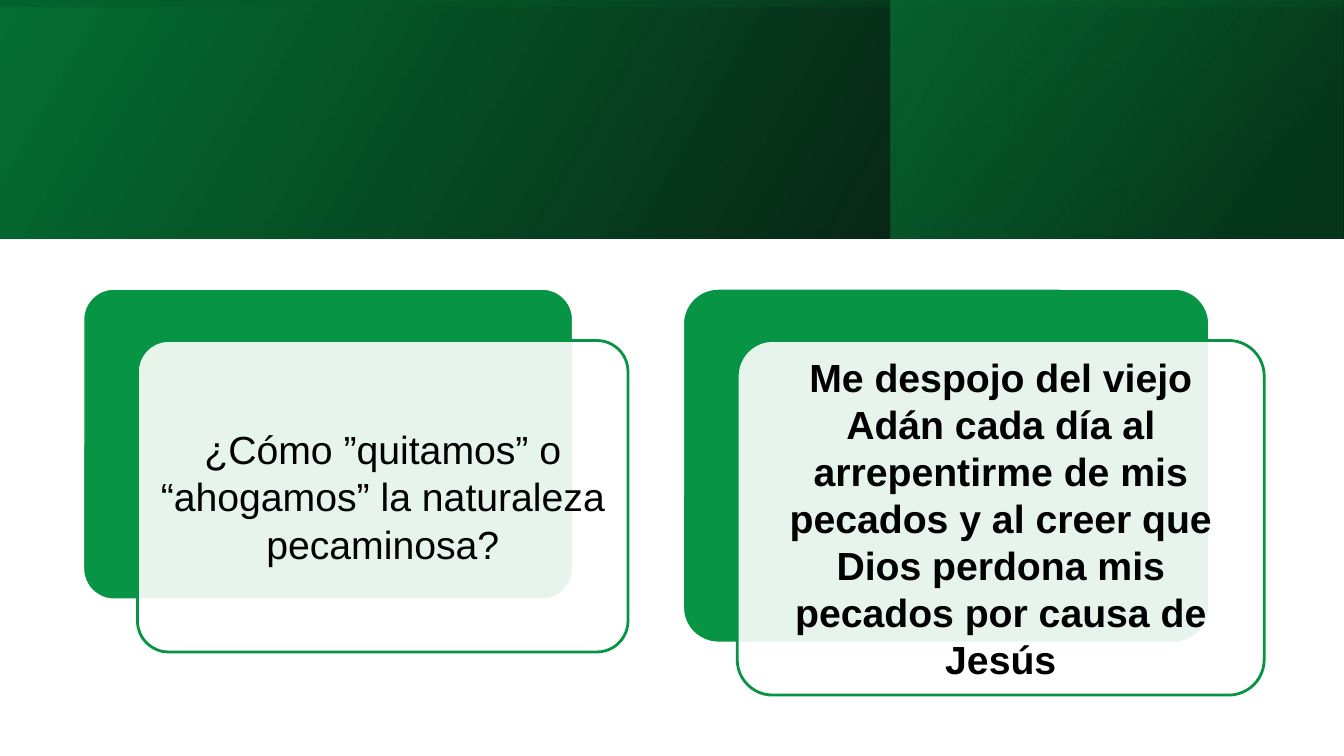
import pptx
import pptx.util
import pptx.oxml
import pptx.dml.color
import pptx.enum.shapes
import pptx.enum.text

Pt = pptx.util.Pt
KIND = pptx.enum.shapes.MSO_SHAPE
NS = "http://schemas.openxmlformats.org/drawingml/2006/main"
WIDE, HIGH = 960, 540
BAND = 170.6
ROUND = 0.1


def color(code):
    return pptx.dml.color.RGBColor.from_string(code)


def write(frame, text, size=28, bold=False, ink="000000", font="Arial"):
    para = frame.paragraphs[0]
    para.alignment = pptx.enum.text.PP_ALIGN.CENTER
    run = para.add_run()
    run.text = text
    run.font.name = font
    run.font.size = Pt(size)
    run.font.bold = bold
    run.font.color.rgb = color(ink)


class Deck:
    green = "079444"
    white = "FFFFFF"

    def __init__(self):
        self.file = pptx.Presentation()
        self.file.slide_width = Pt(WIDE)
        self.file.slide_height = Pt(HIGH)
        self.slide = self.file.slides.add_slide(self.file.slide_layouts[6])

    def shape(self, kind, *box):
        item = self.slide.shapes.add_shape(kind, *map(Pt, box))
        item.shadow.inherit = False
        return item

    def fade(self, box, stops, angle, turn=0):
        """Add a mirrored rectangle with a gradient of (place, colour, opacity) stops."""
        item = self.shape(KIND.RECTANGLE, *box)
        item.rotation = turn
        item.line.fill.background()
        props = item._element.spPr
        props.xfrm.set("flipH", "1")
        marks = "".join(
            f'<a:gs pos="{place * 1000}"><a:srgbClr val="{code}">'
            f'<a:alpha val="{clear * 1000}"/></a:srgbClr></a:gs>'
            for place, code, clear in stops)
        grad = pptx.oxml.parse_xml(
            f'<a:gradFill xmlns:a="{NS}" rotWithShape="1"><a:gsLst>{marks}</a:gsLst>'
            f'<a:lin ang="{angle * 60000}" scaled="0"/></a:gradFill>')
        props.find(f"{{{NS}}}prstGeom").addnext(grad)

    def panel(self, box, fill, line, clear=100):
        item = self.shape(KIND.ROUNDED_RECTANGLE, *box)
        item.adjustments[0] = ROUND
        item.fill.solid()
        item.fill.fore_color.rgb = color(fill)
        item.line.color.rgb = color(line)
        item.line.width = Pt(2)
        if clear < 100:
            tint = item._element.spPr.find(f"{{{NS}}}solidFill")[0]
            tint.append(pptx.oxml.parse_xml(
                f'<a:alpha xmlns:a="{NS}" val="{clear * 1000}"/>'))

    def label(self, box, text, **style):
        frame = self.slide.shapes.add_textbox(*map(Pt, box)).text_frame
        frame.word_wrap = True
        frame.vertical_anchor = pptx.enum.text.MSO_ANCHOR.MIDDLE
        frame.margin_left = frame.margin_right = Pt(8.4)
        frame.margin_top = frame.margin_bottom = Pt(8.4)
        write(frame, text, **style)

    def card(self, left, top, width, height, text, **style):
        """Add a green panel, a shifted white panel over it, and its text."""
        self.panel((left, top, width, height), self.green, self.white)
        left, top = left + 39, top + 37.2
        self.panel((left, top, width, height), self.white, self.green, clear=90)
        inset = 0.293 * ROUND * height
        self.label((left + inset, top + inset, width - 2 * inset, height - 2 * inset),
                   text, **style)


def main():
    deck = Deck()
    deck.fade((0, 0, WIDE, BAND), [(0, "000000", 96), (100, "056F33", 100)], 330)
    deck.fade((636.5, 0, 322.8, BAND), [(19, "044A22", 68), (100, "079444", 48)], 320)
    shift = (WIDE - BAND) / 2
    deck.fade((shift, -shift, BAND, WIDE),
              [(23, "056F33", 16), (99, "000000", 45)], 350, turn=270)
    deck.card(59.2, 206, 350.4, 222.5,
              "¿Cómo ”quitamos” o “ahogamos” la naturaleza pecaminosa?")
    deck.card(487.6, 206, 376.4, 253.3,
              "Me despojo del viejo Adán cada día al arrepentirme de mis pecados "
              "y al creer que Dios perdona mis pecados por causa de Jesús", bold=True)
    deck.file.save("out.pptx")


if __name__ == "__main__":
    main()
